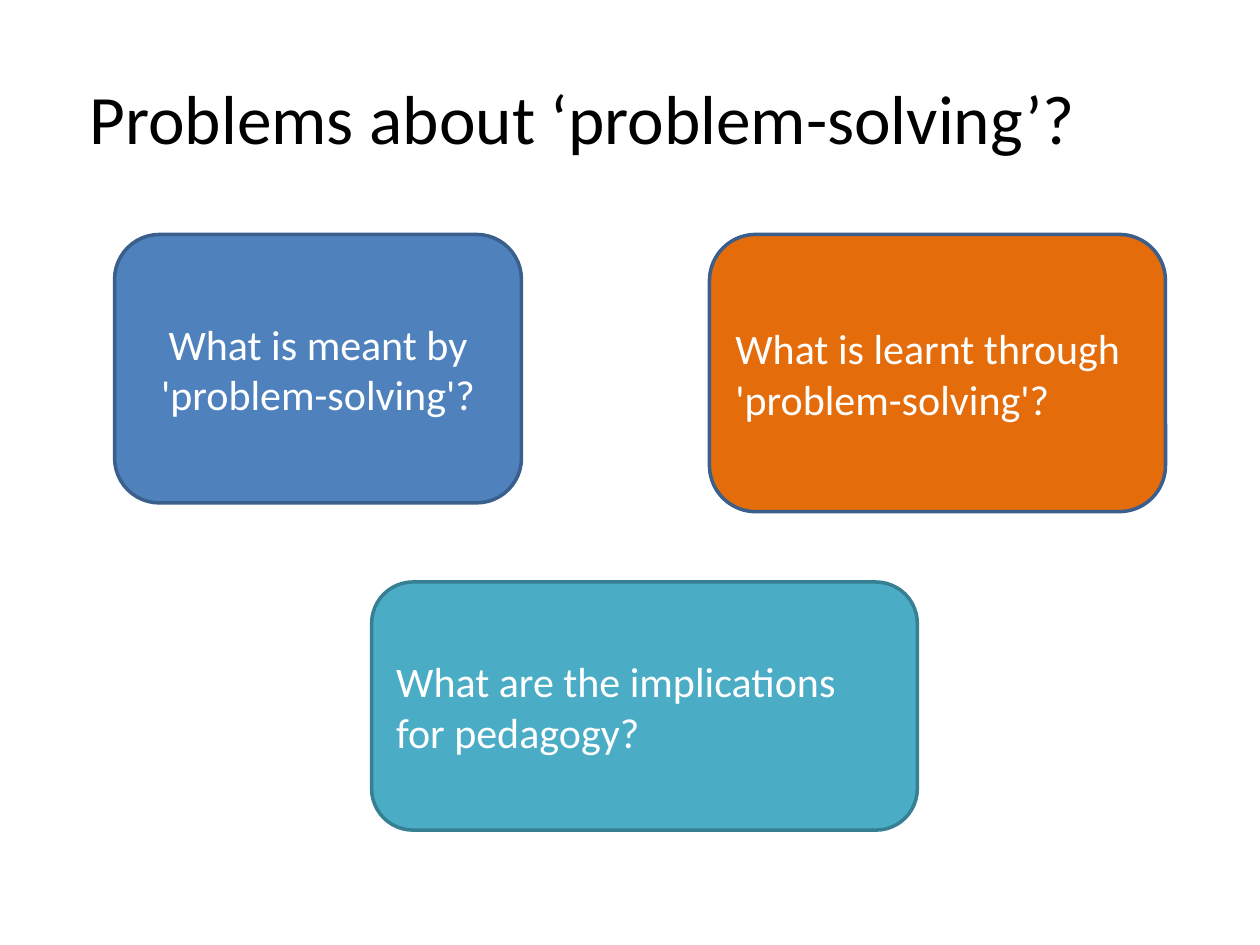
from pptx import Presentation
from pptx.dml.color import RGBColor
from pptx.enum.shapes import MSO_SHAPE as Shape
from pptx.enum.text import MSO_ANCHOR as Anchor, PP_ALIGN as Align
from pptx.util import Pt

FONT = "Calibri"
BLACK = RGBColor(0x00, 0x00, 0x00)
WHITE = RGBColor(0xFF, 0xFF, 0xFF)
BLUE = RGBColor(0x4F, 0x81, 0xBD)
DARK_BLUE = RGBColor(0x3A, 0x5F, 0x8C)
ORANGE = RGBColor(0xE4, 0x6C, 0x0A)
TEAL = RGBColor(0x4B, 0xAC, 0xC6)
DARK_TEAL = RGBColor(0x37, 0x7F, 0x92)

QUESTIONS = [
    ("What is meant by 'problem-solving'?",
     (65.5, 134, 232.5, 153.4), BLUE, DARK_BLUE, Align.CENTER),
    ("What is learnt through 'problem-solving'?",
     (405.4, 134, 260.6, 158.4), ORANGE, DARK_BLUE, Align.LEFT),
    ("What are the implications for pedagogy?",
     (212.4, 332.6, 311.8, 141.8), TEAL, DARK_TEAL, Align.LEFT),
]


def write_text(shape, text, size, color, alignment):
    text_frame = shape.text_frame
    text_frame.text = text
    text_frame.word_wrap = True
    text_frame.vertical_anchor = Anchor.MIDDLE
    paragraph = text_frame.paragraphs[0]
    paragraph.alignment = alignment
    font = paragraph.runs[0].font
    font.name = FONT
    font.size = Pt(size)
    font.color.rgb = color


def add_title(slide, text):
    title = slide.shapes.add_textbox(Pt(0), Pt(21.6), Pt(648), Pt(90))
    write_text(title, text, 39.6, BLACK, Align.CENTER)
    title.text_frame.margin_left = Pt(25)


def add_question(slide, text, bounds, fill, outline, alignment):
    box = slide.shapes.add_shape(Shape.ROUNDED_RECTANGLE, *map(Pt, bounds))
    box.shadow.inherit = False
    box.fill.solid()
    box.fill.fore_color.rgb = fill
    box.line.color.rgb = outline
    box.line.width = Pt(2)
    write_text(box, text, 24, WHITE, alignment)


def main():
    presentation = Presentation()
    presentation.slide_width = Pt(720)
    presentation.slide_height = Pt(540)
    slide = presentation.slides.add_slide(presentation.slide_layouts[6])
    add_title(slide, "Problems about ‘problem-solving’?")
    for question in QUESTIONS:
        add_question(slide, *question)
    presentation.save("out.pptx")


if __name__ == "__main__":
    main()
